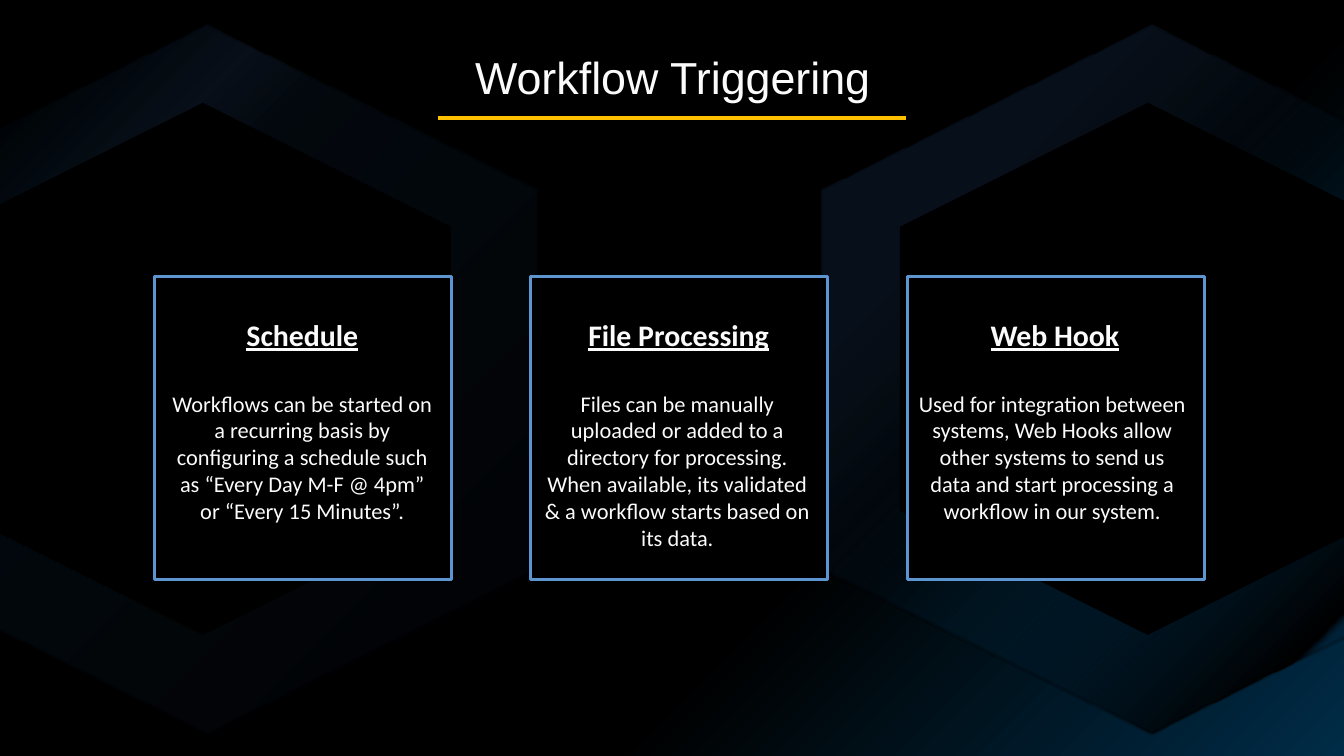
import pptx
import pptx.dml.color
import pptx.enum.shapes
import pptx.enum.text
import pptx.oxml
import pptx.oxml.ns
import pptx.util
from lxml import etree

qn = pptx.oxml.ns.qn
color = pptx.dml.color.RGBColor.from_string
SHAPES = pptx.enum.shapes.MSO_SHAPE
ANCHOR = pptx.enum.text.MSO_ANCHOR

presentation = pptx.Presentation()
presentation.slide_width = pptx.util.Inches(10)
presentation.slide_height = pptx.util.Inches(5.625)
slide = presentation.slides.add_slide(presentation.slide_layouts[6])
CELL = presentation.slide_width / 100  # square grid, 100 columns wide


def grid(*cells):
    """Turn counts of grid cells into slide lengths."""
    return [pptx.util.Emu(round(count * CELL)) for count in cells]


def set_gradient(fill, element, stops, angle):
    """Fill with (position %, colour, opacity %) stops at a clockwise angle."""
    fill.gradient()
    gradient = element.find(".//" + qn("a:gradFill"))
    for child in list(gradient):
        gradient.remove(child)
    gradient.set("rotWithShape", "1")
    stop_list = etree.SubElement(gradient, qn("a:gsLst"))
    for position, hex_color, opacity in stops:
        stop = etree.SubElement(stop_list, qn("a:gs"), pos=str(position * 1000))
        tint = etree.SubElement(stop, qn("a:srgbClr"), val=hex_color)
        if opacity < 100:
            etree.SubElement(tint, qn("a:alpha"), val=str(opacity * 1000))
    etree.SubElement(gradient, qn("a:lin"), ang=str(angle * 60000), scaled="0")


# Background
set_gradient(slide.background.fill, slide._element,
             [(65, "000000", 100), (100, "002C47", 100)], 45)

# Hexagon rings
rings = [
    (59.3, [(24, "519CFF", 10), (46, "002C47", 10), (81, "000000", 100), (82, "001624", 10)]),
    (-11, [(17, "002C47", 10), (29, "519CFF", 10), (36, "295992", 10), (100, "001624", 10)]),
]
for left, stops in rings:
    group = slide.shapes.add_group_shape()
    outer = group.shapes.add_shape(SHAPES.HEXAGON, *grid(left, 3.6, 52.8, 49.2))
    set_gradient(outer.fill, outer._element, stops, 315)
    outer.line.color.rgb = color("000000")
    outer.line.width = pptx.util.Pt(2)
    line_color = outer._element.find(".//" + qn("a:ln") + "//" + qn("a:srgbClr"))
    etree.SubElement(line_color, qn("a:alpha"), val="20000")
    inner = group.shapes.add_shape(SHAPES.HEXAGON, *grid(left + 6.3, 9, 39.6, 36.9))
    inner.fill.solid()
    inner.fill.fore_color.rgb = color("000000")
    inner.line.fill.background()
    for hexagon in (outer, inner):
        hexagon.rotation = 90
        hexagon.shadow.inherit = False

# Cards
FIRST_COLUMN, COLUMN_STEP, BODY_STEP = 11.5, 28, 27.9
cards = [
    ("Schedule",
     "Workflows can be started on a recurring basis by configuring a schedule such as "
     "“Every Day M-F @ 4pm” or “Every 15 Minutes”."),
    ("File Processing",
     "Files can be manually uploaded or added to a directory for processing. "
     "When available, its validated & a workflow starts based on its data."),
    ("Web Hook",
     "Used for integration between systems, Web Hooks allow other systems to send us "
     "data and start processing a workflow in our system."),
]
texts = [("Workflow Triggering", (7.9, 3.9, 84.3, 3.6), ANCHOR.MIDDLE, "Arial", 24, False)]
for column, (heading, body) in enumerate(cards):
    left = FIRST_COLUMN + column * COLUMN_STEP
    card = slide.shapes.add_shape(SHAPES.RECTANGLE, *grid(left, 20.6, 22.1, 22.5))
    card.shadow.inherit = False
    card.fill.solid()
    card.fill.fore_color.rgb = color("000000")
    card.line.color.rgb = color("5D95D1")
    card.line.width = pptx.util.Pt(1.5)
    body_left = FIRST_COLUMN + column * BODY_STEP
    texts.append((heading, (left, 22.8, 22, 4.2), ANCHOR.MIDDLE, "Calibri", 16, True))
    texts.append((body, (body_left, 28, 22, 14), ANCHOR.TOP, "Calibri", 12, False))

# Title, headings and descriptions
for text, cells, anchor, font_name, size, is_heading in texts:
    frame = slide.shapes.add_textbox(*grid(*cells)).text_frame
    frame.word_wrap = True
    frame.vertical_anchor = anchor
    frame.margin_left = frame.margin_right = pptx.util.Inches(0.1)
    frame.margin_top = frame.margin_bottom = pptx.util.Inches(0.1)
    paragraph = frame.paragraphs[0]
    paragraph.alignment = pptx.enum.text.PP_ALIGN.CENTER
    run = paragraph.add_run()
    run.text = text
    run.font.name = font_name
    run.font.size = pptx.util.Pt(size)
    run.font.color.rgb = color("FBFBFB")
    if is_heading:
        run.font.bold = True
        run.font.underline = True

# Title rule with a soft shadow
rule = slide.shapes.add_connector(
    pptx.enum.shapes.MSO_CONNECTOR.STRAIGHT, *grid(32.6, 8.8, 67.4, 8.8))
rule.line.color.rgb = color("FFC000")
rule.line.width = pptx.util.Pt(2)
effects = etree.SubElement(rule._element.spPr, qn("a:effectLst"))
shadow = etree.SubElement(effects, qn("a:outerShdw"), blurRad=str(pptx.util.Pt(3.1)),
                          dist=str(pptx.util.Pt(1.6)), dir=str(90 * 60000), rotWithShape="0")
shadow_color = etree.SubElement(shadow, qn("a:srgbClr"), val="000000")
etree.SubElement(shadow_color, qn("a:alpha"), val="38000")

presentation.save("out.pptx")
